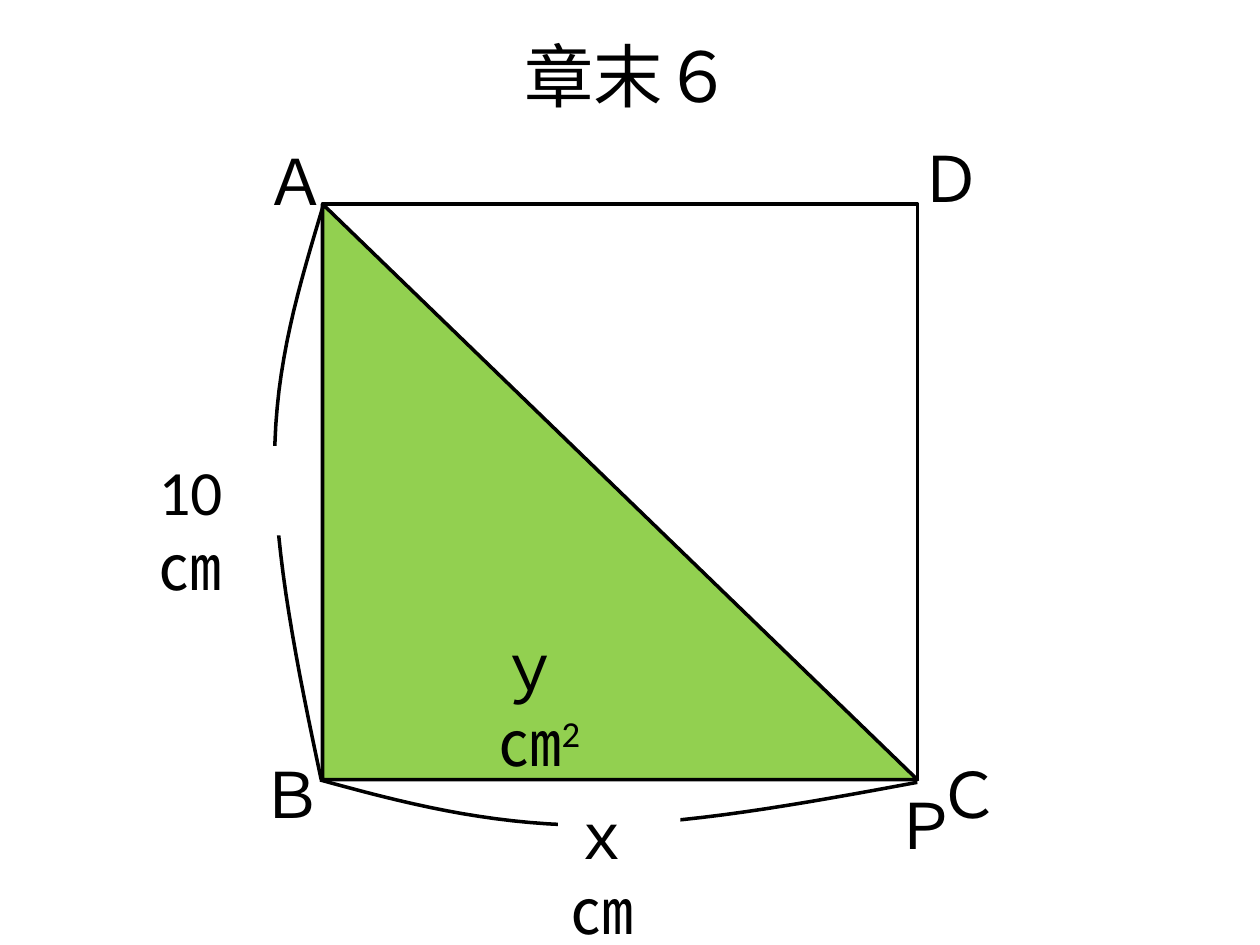
from pptx import Presentation
from pptx.util import Pt
from pptx.dml.color import RGBColor
from pptx.enum.shapes import MSO_SHAPE as SHAPE
from pptx.enum.text import MSO_ANCHOR as ANCHOR, PP_ALIGN as ALIGN


def rgb(h):
    return RGBColor.from_string(h)


def add_text(box, text, size=36, sup="", fill=None, align=ALIGN.LEFT, anchor=ANCHOR.TOP):
    s = slide.shapes.add_textbox(*map(Pt, box))
    if fill:
        s.fill.solid()
        s.fill.fore_color.rgb = rgb(fill)
    tf = s.text_frame
    for name, value in {"word_wrap": True, "vertical_anchor": anchor,
                        "margin_right": Pt(10)}.items():
        setattr(tf, name, value)
    p = tf.paragraphs[0]
    p.alignment = align
    for part in filter(None, (text, sup)):
        r = p.add_run()
        r.text = part
        for name, value in {"name": "Calibri", "size": Pt(size)}.items():
            setattr(r.font, name, value)
        r.font.color.rgb = rgb("000000")
    if sup:
        r.font._element.set("baseline", "30000")


prs = Presentation()
prs.slide_width, prs.slide_height = Pt(720), Pt(540)
slide = prs.slides.add_slide(prs.slide_layouts[6])

add_text((36.7, 15.1, 648, 55.4), "章末６", 39.6, align=ALIGN.CENTER, anchor=ANCHOR.MIDDLE)

outlined = []
for kind, fill in ((SHAPE.RECTANGLE, None), (SHAPE.RIGHT_TRIANGLE, "92D050")):
    s = slide.shapes.add_shape(kind, Pt(184.3), Pt(116.6), Pt(340), Pt(329))
    outlined.append((s, fill))

for text, x, y in (("Ａ", 144, 77.8), ("Ｂ", 141.8, 428.4), ("Ｐ", 504, 445.7),
                   ("Ｃ", 528.5, 428.4), ("Ｄ", 518.4, 76.3)):
    add_text((x, y, 41, 51), text)
add_text((277.9, 355, 81.4, 51), "ｙ㎝", sup="2")

STEPS = 16
curves = (
    ([(182.9, 445.7), (229.7, 458.6), (277.2, 470.9), (334.1, 471.6),
      (391, 471.6), (457.9, 459.4), (524.2, 447.1)], (319, 451.4, 69.8, 51), "ｘ㎝"),
    ([(185, 116.6), (171.4, 162), (157, 208.1), (157, 262.8),
      (157, 317.5), (169.9, 381.6), (183.6, 445.7)], (83.5, 254.9, 87.8, 51), "10㎝"),
)
for nodes, box, text in curves:
    points = []
    for i in (0, 3):
        for k in range(1, STEPS + 1):
            t = k / STEPS
            weights = ((1 - t) ** 3, 3 * t * (1 - t) ** 2, 3 * t * t * (1 - t), t ** 3)
            points.append([sum(w * n[axis] for w, n in zip(weights, nodes[i:i + 4]))
                           for axis in (0, 1)])
    fb = slide.shapes.build_freeform(*map(Pt, nodes[0]), scale=1)
    fb.add_line_segments([(Pt(x), Pt(y)) for x, y in points], close=False)
    outlined.append((fb.convert_to_shape(), None))
    add_text(box, text, fill="FFFFFF")

for s, fill in outlined:
    s.shadow.inherit = False
    s.line.color.rgb = rgb("000000")
    s.line.width = Pt(2)
    if fill:
        s.fill.solid()
        s.fill.fore_color.rgb = rgb(fill)
    else:
        s.fill.background()

prs.save("out.pptx")
